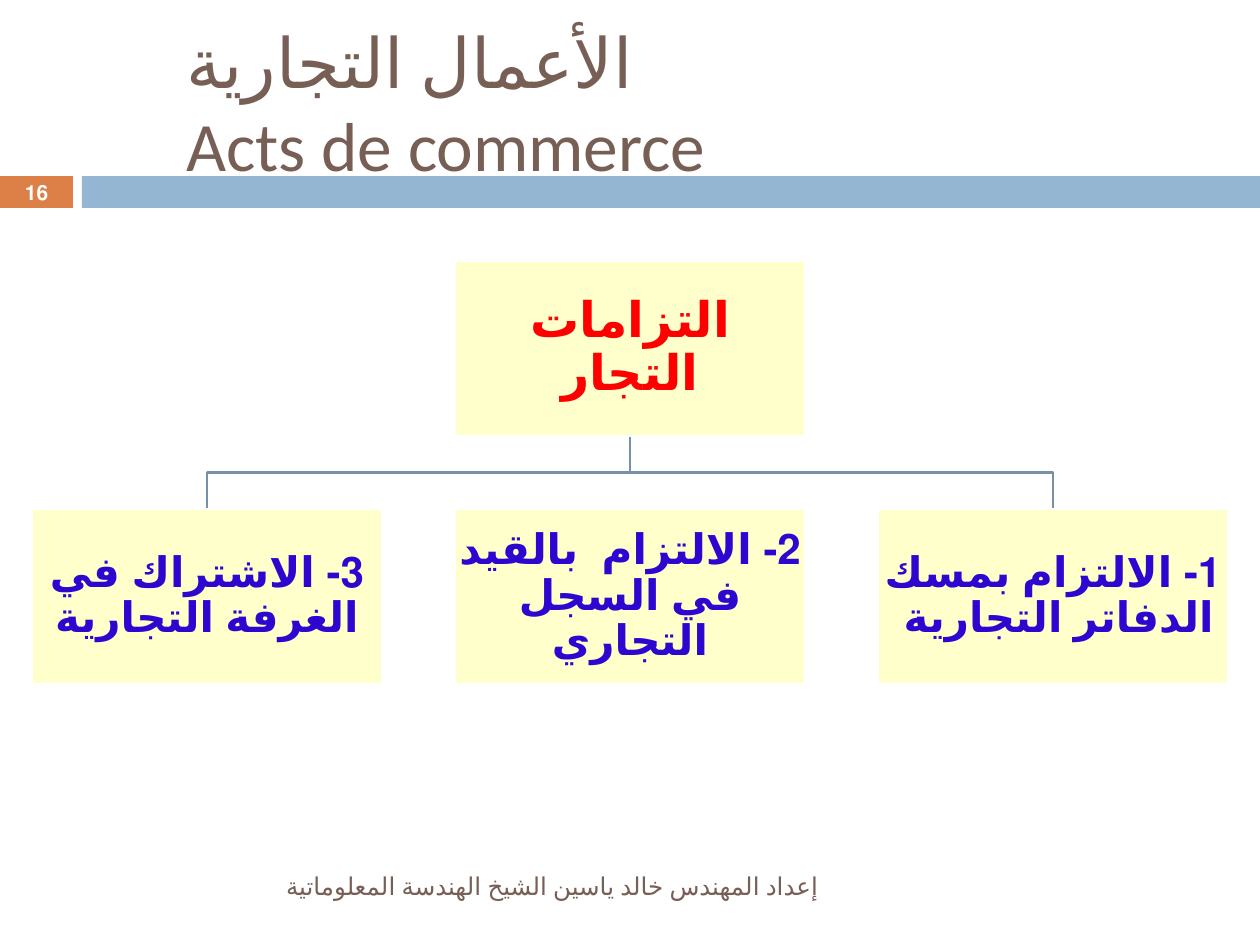
from pptx import Presentation
from pptx.dml.color import RGBColor
from pptx.enum.shapes import MSO_SHAPE
from pptx.enum.text import MSO_ANCHOR, PP_ALIGN
from pptx.util import Pt

RECT = MSO_SHAPE.RECTANGLE
LEFT, CENTER, RIGHT = PP_ALIGN.LEFT, PP_ALIGN.CENTER, PP_ALIGN.RIGHT
MIDDLE, BOTTOM = MSO_ANCHOR.MIDDLE, MSO_ANCHOR.BOTTOM

TITLE = ["الأعمال التجارية", "Acts de commerce"]
ROOT = "التزامات التجار"
DUTIES = [
    "3- الاشتراك في الغرفة التجارية",
    "2- الالتزام  بالقيد في السجل التجاري",
    "1- الالتزام بمسك الدفاتر التجارية ",
]
CREDIT = "إعداد المهندس خالد ياسين الشيخ الهندسة المعلوماتية"
PAGE = "16"
LANGUAGE = "ar-SY"

COLORS = {
    "orange": "DD8047", "blue": "94B6D2", "brown": "775F55", "branch": "7792A8",
    "node": "FFFFCC", "white": "FFFFFF", "root": "FF0000", "duty": "2D07CF",
}

SCALE = 914400 / 126
SLIDE_W, SLIDE_H = 1260, 945
BAND_TOP, BAND_H, PAGE_W, BAND_LEFT = 176, 32, 73, 82
NODE_W, NODE_H, NODE_PITCH = 350, 175, 423
ROOT_TOP, DUTY_TOP = 261, 509
NODE_INSET = 2


def px(value):
    return round(value * SCALE)


def color(name):
    return RGBColor.from_string(COLORS[name])


def add_block(slide, left, top, width, height, fill, line=None):
    block = slide.shapes.add_shape(RECT, px(left), px(top), px(width), px(height))
    block.shadow.inherit = False
    block.fill.solid()
    block.fill.fore_color.rgb = color(fill)
    if line:
        block.line.color.rgb = color(line)
        block.line.width = Pt(1.5)
    else:
        block.line.fill.background()
    return block


def write(frame, lines, font, size, ink, align, anchor=MIDDLE, bold=False):
    frame.word_wrap = True
    frame.vertical_anchor = anchor
    paragraph = frame.paragraphs[0]
    paragraph.alignment = align
    paragraph._p.get_or_add_pPr().set("rtl", "1")
    for index, line in enumerate(lines):
        if index:
            paragraph.add_line_break()
        run = paragraph.add_run()
        run.text = line
        run.font.name = font
        run.font.size = Pt(size)
        run.font.bold = bold
        run.font.color.rgb = color(ink)
        run._r.get_or_add_rPr().set("lang", LANGUAGE)
    return paragraph


def add_label(slide, left, top, width, height):
    return slide.shapes.add_textbox(px(left), px(top), px(width), px(height)).text_frame


def add_node(slide, center, top, label, size, ink):
    node = add_block(slide, center - NODE_W / 2, top, NODE_W, NODE_H, "node", "white")
    frame = node.text_frame
    frame.margin_left = frame.margin_right = px(NODE_INSET)
    frame.margin_top = frame.margin_bottom = px(NODE_INSET)
    paragraph = write(frame, [label], "Times New Roman", size, ink, CENTER, bold=True)
    paragraph.line_spacing = 0.9


def add_branch(slide, start, end):
    root_bottom = ROOT_TOP + NODE_H
    bend = (root_bottom + DUTY_TOP) / 2
    builder = slide.shapes.build_freeform(px(start), px(root_bottom), scale=1.0)
    corners = [(start, bend), (end, bend), (end, DUTY_TOP)]
    builder.add_line_segments([(px(x), px(y)) for x, y in corners], close=False)
    branch = builder.convert_to_shape()
    branch.shadow.inherit = False
    branch.fill.background()
    branch.line.color.rgb = color("branch")
    branch.line.width = Pt(1.5)


def main():
    deck = Presentation()
    deck.slide_width, deck.slide_height = px(SLIDE_W), px(SLIDE_H)
    slide = deck.slides.add_slide(deck.slide_layouts[6])

    page = add_block(slide, 0, BAND_TOP, PAGE_W, BAND_H, "orange")
    write(page.text_frame, [PAGE], "Calibri", 11.9, "white", CENTER, bold=True)
    add_block(slide, BAND_LEFT, BAND_TOP, SLIDE_W - BAND_LEFT, BAND_H, "blue")

    title = add_label(slide, 174, 76, 1124, 136)
    title.margin_bottom = px(27)
    write(title, TITLE, "Calibri", 39.6, "brown", LEFT, BOTTOM)
    credit = add_label(slide, 84, 861, 747, 50)
    write(credit, [CREDIT], "Arial", 14, "brown", RIGHT)

    middle = SLIDE_W / 2
    centers = [middle + (i - 1) * NODE_PITCH for i in range(len(DUTIES))]
    for center in (centers[-1], centers[0]):
        add_branch(slide, middle, center)
    add_node(slide, middle, ROOT_TOP, ROOT, 28, "root")
    for center, duty in zip(centers, DUTIES):
        add_node(slide, center, DUTY_TOP, duty, 24, "duty")

    deck.save("out.pptx")


if __name__ == "__main__":
    main()
